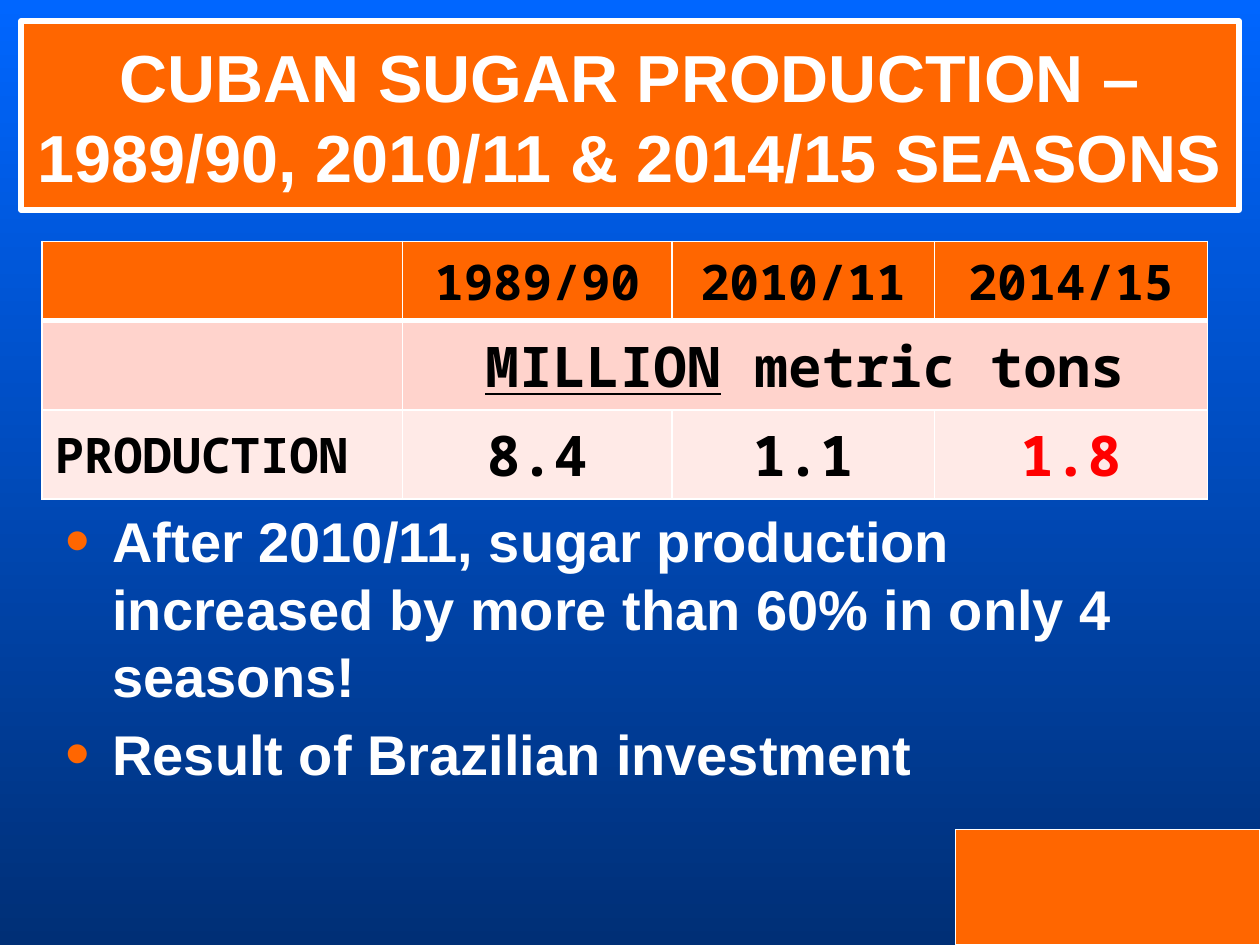
from lxml.etree import SubElement
from pptx import Presentation
from pptx.dml.color import RGBColor
from pptx.enum.shapes import MSO_SHAPE
from pptx.enum.text import MSO_ANCHOR, MSO_AUTO_SIZE, PP_ALIGN
from pptx.oxml.ns import qn
from pptx.util import Pt

ORANGE = RGBColor(0xFF, 0x66, 0x00)
WHITE = RGBColor(0xFF, 0xFF, 0xFF)
BLACK = RGBColor(0x00, 0x00, 0x00)
RED = RGBColor(0xFF, 0x00, 0x00)
PINK = RGBColor(0xFF, 0xD3, 0xCC)
PALE_PINK = RGBColor(0xFF, 0xEA, 0xE7)
SKY_BLUE = RGBColor(0x00, 0x66, 0xFF)
NAVY = RGBColor(0x00, 0x2F, 0x76)

SEASONS = ["1989/90", "2010/11", "2014/15"]
PRODUCTION = ["8.4", "1.1", "1.8"]
COLUMN_WIDTHS = [206, 154, 150, 156]
ROW_HEIGHTS = [45, 51, 51]
POINTS = [
    "After 2010/11, sugar production increased by more than 60% in only 4 seasons!",
    "Result of Brazilian investment",
]


def add_text(paragraph, text, size=32, font="Arial", color=WHITE, align=None, underline=None):
    """Append one bold formatted run to a paragraph."""
    run = paragraph.add_run()
    run.text = text
    run.font.size, run.font.name, run.font.bold = Pt(size), font, True
    run.font.color.rgb = color
    run.font.underline = underline
    if align is not None:
        paragraph.alignment = align


def place(shape, left, top, width, height):
    """Set the position and size of a shape in points."""
    shape.left, shape.top = Pt(left), Pt(top)
    shape.width, shape.height = Pt(width), Pt(height)


def paint(shape, line_width):
    """Give a shape an orange fill and a white outline."""
    shape.fill.solid()
    shape.fill.fore_color.rgb = ORANGE
    shape.line.color.rgb = WHITE
    shape.line.width = Pt(line_width)


def set_background(slide):
    """Fill the slide with a vertical blue gradient."""
    fill = slide.background.fill
    fill.gradient()
    fill.gradient_angle = 270
    for stop, color in zip(fill.gradient_stops, (SKY_BLUE, NAVY)):
        stop.color.rgb = color


def add_corner_block(slide):
    """Draw the orange block in the lower right corner."""
    corner = slide.shapes.add_shape(
        MSO_SHAPE.RECTANGLE, Pt(546), Pt(474), Pt(174), Pt(66))
    corner.shadow.inherit = False
    paint(corner, 0.75)


def fill_title(title):
    """Format the title banner and write its heading."""
    place(title, 12, 12, 696, 108)
    paint(title, 3)
    frame = title.text_frame
    frame.auto_size = MSO_AUTO_SIZE.NONE
    frame.vertical_anchor = MSO_ANCHOR.MIDDLE
    add_text(frame.paragraphs[0],
             "CUBAN SUGAR PRODUCTION – 1989/90, 2010/11 & 2014/15 SEASONS",
             size=38, align=PP_ALIGN.CENTER)


def style_cell(cell, fill, top=1, bottom=1):
    """Give a cell its white borders, fill and anchor."""
    properties = cell._tc.get_or_add_tcPr()
    for side, width in (("L", 1), ("R", 1), ("T", top), ("B", bottom)):
        border = SubElement(properties, qn(f"a:ln{side}"), w=str(Pt(width)))
        solid = SubElement(border, qn("a:solidFill"))
        SubElement(solid, qn("a:srgbClr"), val=str(WHITE))
    cell.fill.solid()
    cell.fill.fore_color.rgb = fill
    cell.vertical_anchor = MSO_ANCHOR.MIDDLE


def write_cell(cell, text, size=32, color=BLACK, align=PP_ALIGN.CENTER, underline=None):
    """Add monospaced text to a table cell."""
    add_text(cell.text_frame.paragraphs[0], text, size=size, font="Noto Sans Mono",
             color=color, align=align, underline=underline)


def add_production_table(slide):
    """Build the table of production by season."""
    table = slide.shapes.add_table(
        len(ROW_HEIGHTS), len(COLUMN_WIDTHS), Pt(24), Pt(138),
        Pt(sum(COLUMN_WIDTHS)), Pt(sum(ROW_HEIGHTS))).table
    for column, width in zip(table.columns, COLUMN_WIDTHS):
        column.width = Pt(width)
    row_styles = [(ORANGE, 1, 3), (PINK, 3, 1), (PALE_PINK, 1, 1)]
    for row, height, row_style in zip(table.rows, ROW_HEIGHTS, row_styles):
        row.height = Pt(height)
        for cell in row.cells:
            style_cell(cell, *row_style)

    unit = table.cell(1, 1)
    unit.merge(table.cell(1, 3))
    write_cell(unit, "MILLION", underline=True)
    write_cell(unit, " metric tons")
    write_cell(table.cell(2, 0), "PRODUCTION", size=28, align=PP_ALIGN.LEFT)
    for column, (season, amount) in enumerate(zip(SEASONS, PRODUCTION), start=1):
        write_cell(table.cell(0, column), season, size=28)
        write_cell(table.cell(2, column), amount,
                   color=RED if season == SEASONS[-1] else BLACK)


def add_bullet(paragraph):
    """Give a paragraph a hanging orange bullet."""
    properties = paragraph._p.get_or_add_pPr()
    properties.set("marL", str(Pt(27)))
    properties.set("indent", str(-Pt(27)))
    color = SubElement(properties, qn("a:buClr"))
    SubElement(color, qn("a:srgbClr"), val=str(ORANGE))
    SubElement(properties, qn("a:buSzPct"), val="125000")
    SubElement(properties, qn("a:buFont"), typeface="Arial")
    SubElement(properties, qn("a:buChar"), char="•")


def fill_body(body):
    """Write the bulleted remarks below the table."""
    place(body, 30, 286, 660, 176)
    frame = body.text_frame
    frame.auto_size = MSO_AUTO_SIZE.NONE
    for index, point in enumerate(POINTS):
        paragraph = frame.add_paragraph() if index else frame.paragraphs[0]
        add_bullet(paragraph)
        paragraph.space_before = Pt(6.4 if index else 0)
        add_text(paragraph, point, align=PP_ALIGN.LEFT)


def main():
    """Build and save the slide."""
    presentation = Presentation()
    presentation.slide_width, presentation.slide_height = Pt(720), Pt(540)
    slide = presentation.slides.add_slide(presentation.slide_layouts[1])
    set_background(slide)
    add_corner_block(slide)
    fill_title(slide.shapes.title)
    add_production_table(slide)
    fill_body(slide.placeholders[1])
    presentation.save("out.pptx")


if __name__ == "__main__":
    main()
